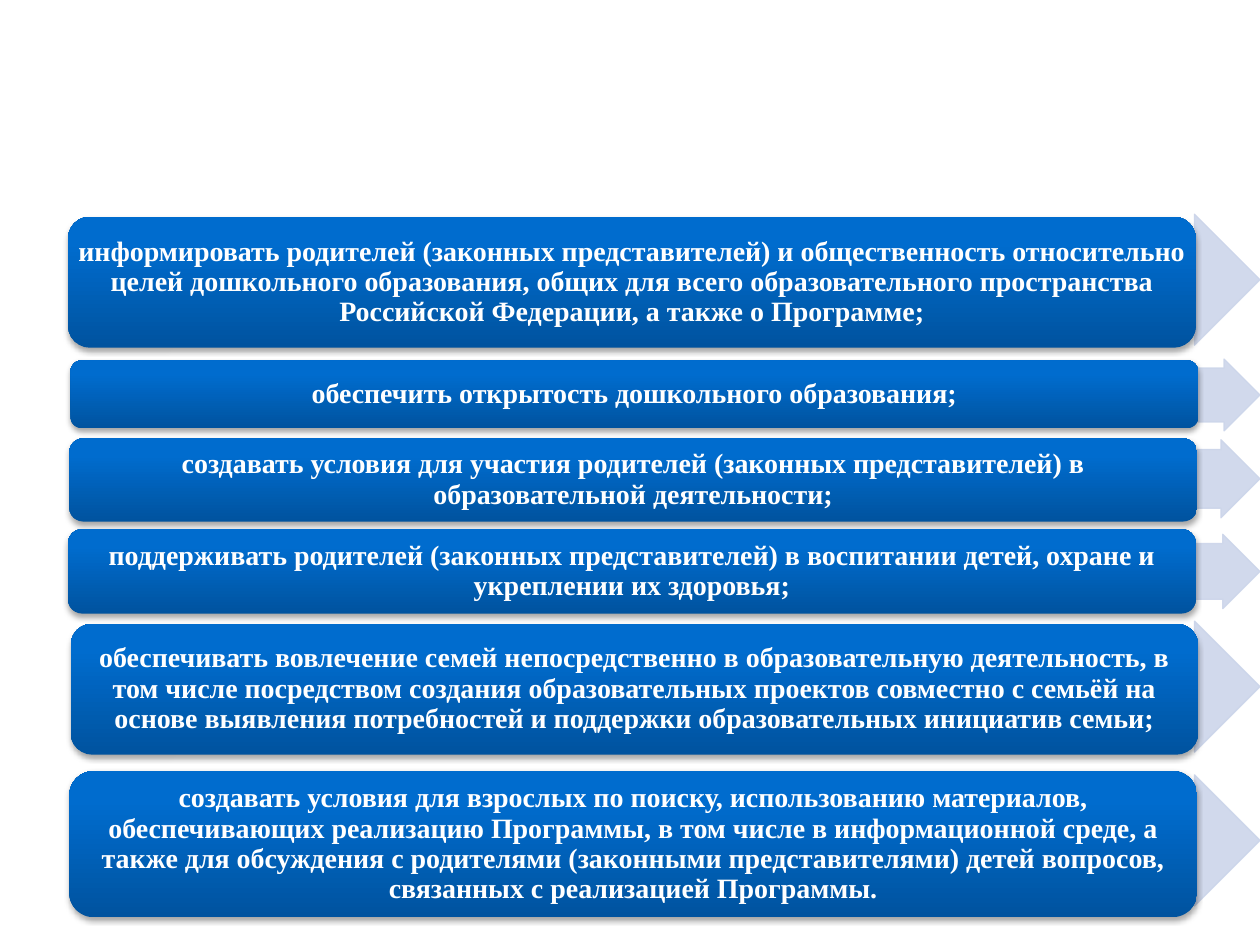
from copy import deepcopy

from lxml import etree
from pptx import Presentation
from pptx import util as u
from pptx.dml.color import RGBColor
from pptx.enum import shapes, text
from pptx.oxml import ns

WIDTH, HEIGHT = 10, 7.5
ARROW_LEFT = 8.95
BAR_WIDTH = 8.95
GRADIENT = [(0, "00539F"), (0.8, "006CCE"), (1, "006DCF")]
ARROW_COLOUR = "CCD5EA"

# Each goal: bar left, bar top, bar height, arrow top, arrow height, wording
GOALS = [
    (0.54, 1.72, 1.04, 1.7, 1.04,
     "информировать родителей (законных представителей) и общественность "
     "относительно целей дошкольного образования, общих для всего "
     "образовательного пространства Российской Федерации, а также о Программе;"),
    (0.56, 2.86, 0.54, 2.85, 0.57,
     "обеспечить открытость дошкольного образования;"),
    (0.55, 3.48, 0.66, 3.49, 0.62,
     "создавать условия для участия родителей (законных представителей) "
     "в образовательной деятельности;"),
    (0.54, 4.2, 0.67, 4.24, 0.59,
     "поддерживать родителей (законных представителей) в воспитании детей, "
     "охране и укреплении их здоровья;"),
    (0.56, 4.95, 1.04, 4.93, 1.04,
     "обеспечивать вовлечение семей непосредственно в образовательную "
     "деятельность, в том числе посредством создания образовательных проектов "
     "совместно с семьёй на основе выявления потребностей и поддержки "
     "образовательных инициатив семьи;"),
    (0.55, 6.12, 1.16, 6.15, 1.04,
     "создавать условия для взрослых по поиску, использованию материалов, "
     "обеспечивающих реализацию Программы, в том числе в информационной среде, "
     "а также для обсуждения с родителями (законными представителями) детей "
     "вопросов, связанных с реализацией Программы."),
]


def paint(colour, value):
    colour.rgb = RGBColor.from_string(value)


def add_shape(slide, kind, left, top, width, height):
    shape = slide.shapes.add_shape(kind, *map(u.Inches, (left, top, width, height)))
    shape.shadow.inherit = False
    return shape


def add_child(parent, tag, **attributes):
    return etree.SubElement(parent, ns.qn(tag), attributes)


def add_arrow(slide, top, height):
    arrow = add_shape(slide, shapes.MSO_SHAPE.RIGHT_ARROW,
                      ARROW_LEFT, top, WIDTH - ARROW_LEFT, height)
    arrow.adjustments[0] = 0.75
    arrow.adjustments[1] = 0.5
    arrow.line.width = u.Pt(0.75)
    for fill in (arrow.fill, arrow.line.fill):
        fill.solid()
        paint(fill.fore_color, ARROW_COLOUR)
    for colour in arrow.element.spPr.iter(ns.qn("a:srgbClr")):
        add_child(colour, "a:alpha", val="90000")


def fill_gradient(shape):
    shape.fill.gradient()
    shape.fill.gradient_angle = 90
    stops = shape.element.spPr.find(".//" + ns.qn("a:gsLst"))
    stops.append(deepcopy(stops[0]))
    for stop, (position, colour) in zip(shape.fill.gradient_stops, GRADIENT):
        stop.position = position
        paint(stop.color, colour)


def add_soft_shadow(shape):
    effects = shape.element.spPr.find(ns.qn("a:effectLst"))
    shadow = add_child(effects, "a:outerShdw", blurRad="40000", dist="23000",
                       dir="5400000", rotWithShape="0")
    colour = add_child(shadow, "a:srgbClr", val="000000")
    add_child(colour, "a:alpha", val="35000")


def add_bar(slide, left, top, height, wording):
    bar = add_shape(slide, shapes.MSO_SHAPE.ROUNDED_RECTANGLE,
                    left, top, BAR_WIDTH, height)
    fill_gradient(bar)
    bar.line.fill.background()
    add_soft_shadow(bar)
    frame = bar.text_frame
    frame.word_wrap = True
    frame.vertical_anchor = text.MSO_ANCHOR.MIDDLE
    frame.margin_left = frame.margin_right = u.Inches(0.02)
    frame.margin_top = frame.margin_bottom = 0
    para = frame.paragraphs[0]
    para.text = wording
    para.alignment = text.PP_ALIGN.CENTER
    para.line_spacing = 0.9
    para.font.name = "Times New Roman"
    para.font.size = u.Pt(16)
    para.font.bold = True
    paint(para.font.color, "FFFFFF")


def main():
    deck = Presentation()
    deck.slide_width, deck.slide_height = u.Inches(WIDTH), u.Inches(HEIGHT)
    page = deck.slides.add_slide(deck.slide_layouts[6])
    for left, top, height, arrow_top, arrow_height, wording in GOALS:
        add_arrow(page, arrow_top, arrow_height)
        add_bar(page, left, top, height, wording)
    deck.save("out.pptx")


if __name__ == "__main__":
    main()
